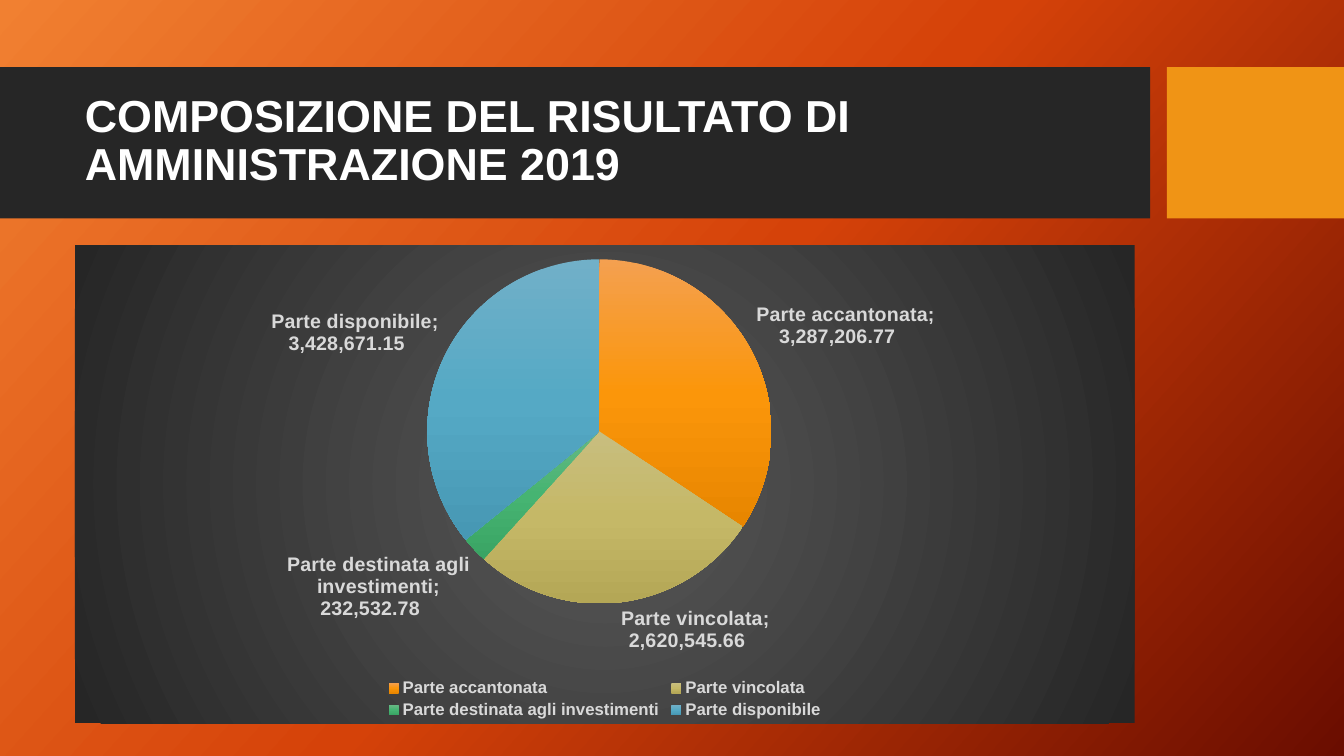
import pptx
import pptx.chart.data
import pptx.dml.color
import pptx.enum.chart
import pptx.enum.shapes
import pptx.enum.text
import pptx.oxml
import pptx.oxml.ns
import pptx.util

Pt = pptx.util.Pt
RGBColor = pptx.dml.color.RGBColor

WHITE = RGBColor(0xFF, 0xFF, 0xFF)
LIGHT_GREY = RGBColor(0xD9, 0xD9, 0xD9)
DARK = RGBColor(0x26, 0x26, 0x26)
GREY = RGBColor(0x59, 0x59, 0x59)
AMBER = RGBColor(0xF0, 0x94, 0x15)
BACKGROUND = (RGBColor(0xF1, 0x80, 0x31), RGBColor(0xD5, 0x42, 0x09),
              RGBColor(0x6A, 0x0D, 0x00))

# Category, value and the shades of its slice from top to bottom
PARTS = [
    ("Parte accantonata", 3287206.77,
     (RGBColor(0xF4, 0xA0, 0x50), RGBColor(0xFB, 0x96, 0x0A), RGBColor(0xE8, 0x86, 0x00))),
    ("Parte vincolata", 2620545.66,
     (RGBColor(0xC8, 0xBE, 0x7F), RGBColor(0xC5, 0xB8, 0x67), RGBColor(0xB4, 0xA7, 0x56))),
    ("Parte destinata agli investimenti", 232532.78,
     (RGBColor(0x67, 0xB8, 0x84), RGBColor(0x46, 0xB4, 0x72), RGBColor(0x3A, 0xA4, 0x64))),
    ("Parte disponibile", 3428671.15,
     (RGBColor(0x71, 0xB0, 0xC8), RGBColor(0x55, 0xA9, 0xC5), RGBColor(0x47, 0x98, 0xB4))),
]


def gradient(colors, angle=None):
    """Evenly spaced gradient: linear at an angle, or circular without one."""
    step = 100000 // (len(colors) - 1)
    stops = "".join(f'<a:gs pos="{i * step}"><a:srgbClr val="{c}"/></a:gs>'
                    for i, c in enumerate(colors))
    if angle is None:
        shade = ('<a:path path="circle"><a:fillToRect l="50000" t="50000" '
                 'r="50000" b="50000"/></a:path>')
    else:
        shade = f'<a:lin ang="{angle * 60000}" scaled="0"/>'
    return pptx.oxml.parse_xml(
        f'<a:gradFill {pptx.oxml.ns.nsdecls("a")} rotWithShape="1">'
        f'<a:gsLst>{stops}</a:gsLst>{shade}</a:gradFill>')


def replace_gradient(parent, colors, angle):
    old = parent.xpath(".//a:gradFill")[0]
    old.getparent().replace(old, gradient(colors, angle))


def manual_layout(x, y, w, h, inner=False):
    target = '<c:layoutTarget val="inner"/>' if inner else ""
    return pptx.oxml.parse_xml(
        f'<c:layout {pptx.oxml.ns.nsdecls("c")}><c:manualLayout>{target}'
        '<c:xMode val="edge"/><c:yMode val="edge"/>'
        f'<c:x val="{x}"/><c:y val="{y}"/><c:w val="{w}"/><c:h val="{h}"/>'
        '</c:manualLayout></c:layout>')


def set_layout(element, layout, after=None):
    for old in element.xpath("./c:layout"):
        element.remove(old)
    if after is None:
        element.insert(0, layout)
    else:
        element.xpath(after)[0].addnext(layout)


def style_font(font, size, color):
    font.name = "Arial"
    font.size = Pt(size)
    font.bold = True
    font.color.rgb = color


def add_block(s, x, y, w, h, color):
    sp = s.shapes.add_shape(pptx.enum.shapes.MSO_SHAPE.RECTANGLE,
                            Pt(x), Pt(y), Pt(w), Pt(h))
    sp.shadow.inherit = False
    sp.fill.solid()
    sp.fill.fore_color.rgb = color
    sp.line.fill.background()


def add_header(s, x, y, w, h):
    # Dark band and amber block, split by a narrow gap
    band, gap = 821.5, 12
    add_block(s, x, y, band, h, DARK)
    add_block(s, x + band + gap, y, w - band - gap, h, AMBER)

    # Title
    sp = s.shapes.add_textbox(Pt(x + 53.5), Pt(y + 11), Pt(757), Pt(85))
    tf = sp.text_frame
    tf.word_wrap = True
    tf.vertical_anchor = pptx.enum.text.MSO_ANCHOR.MIDDLE
    p = tf.paragraphs[0]
    p.text = "COMPOSIZIONE DEL RISULTATO DI AMMINISTRAZIONE 2019"
    p.line_spacing = 0.9
    style_font(p.font, 32, WHITE)


def add_pie(s, x, y, w, h):
    data = pptx.chart.data.CategoryChartData()
    data.categories = [name for name, _, _ in PARTS]
    data.add_series("Series 1", [value for _, value, _ in PARTS])
    chart = s.shapes.add_chart(pptx.enum.chart.XL_CHART_TYPE.PIE,
                               Pt(x), Pt(y), Pt(w), Pt(h), data).chart
    chart.has_title = False
    chart.font.name = "Karla"
    chart.font.size = Pt(10)
    chart.font.color.rgb = WHITE

    # Chart background
    space = chart._chartSpace
    sp_pr = pptx.oxml.parse_xml(f'<c:spPr {pptx.oxml.ns.nsdecls("c", "a")}>'
                                '<a:ln><a:noFill/></a:ln></c:spPr>')
    sp_pr.insert(0, gradient((GREY, DARK)))
    space.xpath("./c:txPr")[0].addprevious(sp_pr)

    # Slices
    plot = chart.plots[0]
    plot.vary_by_categories = True
    for i, (_, _, shades) in enumerate(PARTS):
        point = plot.series[0].points[i]
        point.format.fill.gradient()
        point.format.line.fill.background()
        replace_gradient(space.xpath(".//c:dPt")[i], shades, 90)
    set_layout(space.xpath(".//c:plotArea")[0],
               manual_layout(0.33, 0.03, 0.33, 0.72, inner=True))

    # Labels
    labels = plot.series[0].data_labels
    labels.show_category_name = True
    labels.show_value = True
    labels.show_percentage = False
    labels.show_legend_key = False
    labels.number_format = "#,##0.00\\ _€"
    labels.number_format_is_linked = False
    labels.position = pptx.enum.chart.XL_LABEL_POSITION.OUTSIDE_END
    style_font(labels.font, 14, LIGHT_GREY)

    # Legend
    chart.has_legend = True
    legend = chart.legend
    legend.position = pptx.enum.chart.XL_LEGEND_POSITION.BOTTOM
    legend.include_in_layout = False
    style_font(legend.font, 12, LIGHT_GREY)
    set_layout(space.xpath(".//c:legend")[0],
               manual_layout(0.29, 0.9, 0.42, 0.1), after="./c:legendPos")


def main():
    prs = pptx.Presentation()
    prs.slide_width, prs.slide_height = Pt(960), Pt(540)
    s = prs.slides.add_slide(prs.slide_layouts[6])
    s.background.fill.gradient()
    replace_gradient(s._element, BACKGROUND, 42)
    add_header(s, 0, 48, 960, 108)
    add_pie(s, 53.5, 175, 757, 341.5)
    prs.save("out.pptx")


if __name__ == "__main__":
    main()
